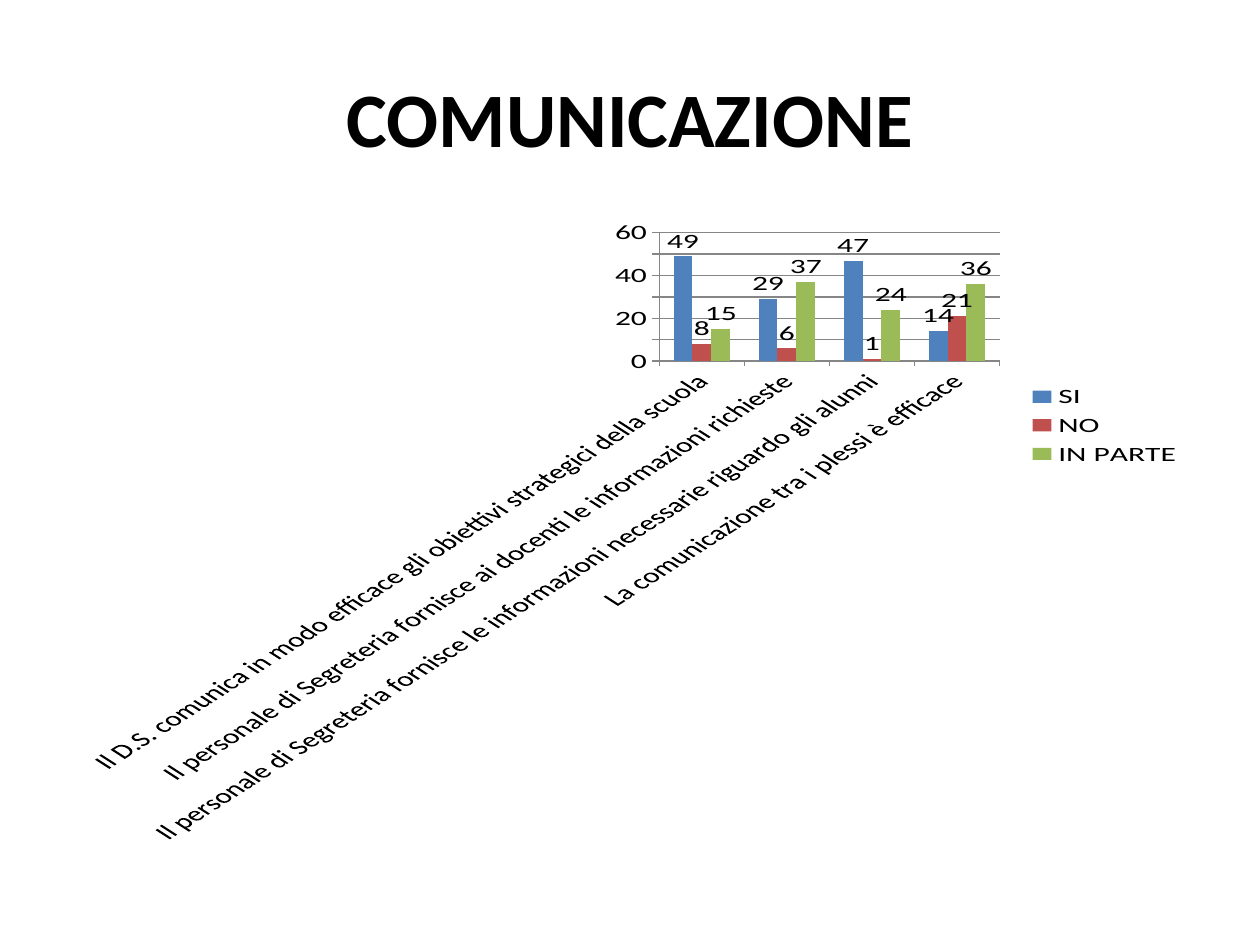
"""Build the COMUNICAZIONE survey slide with its clustered column chart."""
from dataclasses import dataclass

from pptx import Presentation
from pptx.chart.data import CategoryChartData
from pptx.dml.color import RGBColor
from pptx.enum import chart as ch, text as tx
from pptx.util import Pt

FONT = "Calibri"
BLACK = "000000"
AXIS_GREY = "868686"


@dataclass(frozen=True)
class Answer:
    """One possible answer with its count for each statement."""
    name: str
    counts: tuple[int, ...]
    color: str


STATEMENTS = (
    "Il D.S. comunica in modo efficace gli obiettivi strategici della scuola",
    "Il personale di Segreteria fornisce ai docenti le informazioni richieste",
    "Il personale di Segreteria fornisce le informazioni necessarie riguardo gli alunni",
    "La comunicazione tra i plessi è efficace",
)
ANSWERS = (
    Answer("SI", (49, 29, 47, 14), "4F81BD"),
    Answer("NO", (8, 6, 1, 21), "C0504D"),
    Answer("IN PARTE", (15, 37, 24, 36), "9BBB59"),
)


def rgb(color: str) -> RGBColor:
    """Turn a hex string into a colour."""
    return RGBColor.from_string(color)


def style_font(font, size: float, color: str = BLACK, bold: bool = False) -> None:
    """Set face, size, colour and weight of a font."""
    font.name = FONT
    font.size = Pt(size)
    font.bold = bold
    font.color.rgb = rgb(color)


def write_text(frame, words: str, *, size: float, bold: bool = False,
               align=tx.PP_ALIGN.CENTER, anchor=tx.MSO_ANCHOR.MIDDLE) -> None:
    """Fill a text frame with one formatted paragraph."""
    frame.word_wrap = True
    frame.vertical_anchor = anchor
    paragraph = frame.paragraphs[0]
    paragraph.alignment = align
    run = paragraph.add_run()
    run.text = words
    style_font(run.font, size, bold=bold)


def style_line(line) -> None:
    """Give an axis or gridline its thin grey stroke."""
    line.color.rgb = rgb(AXIS_GREY)
    line.width = Pt(0.75)


def add_survey_chart(slide, left: float, top: float, width: float, height: float) -> None:
    """Add the column chart of answers by statement."""
    survey = CategoryChartData()
    survey.categories = STATEMENTS
    for answer in ANSWERS:
        survey.add_series(answer.name, answer.counts)
    chart = slide.shapes.add_chart(
        ch.XL_CHART_TYPE.COLUMN_CLUSTERED,
        Pt(left), Pt(top), Pt(width), Pt(height), survey).chart
    style_font(chart.font, 18)
    chart.has_title = False
    chart.has_legend = True
    chart.legend.position = ch.XL_LEGEND_POSITION.RIGHT
    chart.legend.include_in_layout = False

    columns = chart.plots[0]
    columns.gap_width = 150
    columns.overlap = 0
    columns.vary_by_categories = False
    for series, answer in zip(columns.series, ANSWERS):
        series.format.fill.solid()
        series.format.fill.fore_color.rgb = rgb(answer.color)
        series.data_labels.show_value = True
        series.data_labels.position = ch.XL_LABEL_POSITION.OUTSIDE_END

    for axis in (chart.category_axis, chart.value_axis):
        axis.major_tick_mark = ch.XL_TICK_MARK.OUTSIDE
        axis.minor_tick_mark = ch.XL_TICK_MARK.NONE
        style_line(axis.format.line)
    counts = chart.value_axis
    counts.minimum_scale, counts.maximum_scale, counts.major_unit = 0, 60, 10
    counts.has_major_gridlines = True
    style_line(counts.major_gridlines.format.line)


def main() -> None:
    """Create and save the presentation."""
    deck = Presentation()
    deck.slide_width, deck.slide_height = Pt(720), Pt(540)
    slide = deck.slides.add_slide(deck.slide_layouts[5])
    title = slide.shapes.title
    title.left, title.top, title.width, title.height = Pt(36), Pt(21.6), Pt(648), Pt(90)
    write_text(title.text_frame, "COMUNICAZIONE", size=44, bold=True)
    add_survey_chart(slide, 36, 126, 648, 356.4)
    deck.save("out.pptx")


if __name__ == "__main__":
    main()
